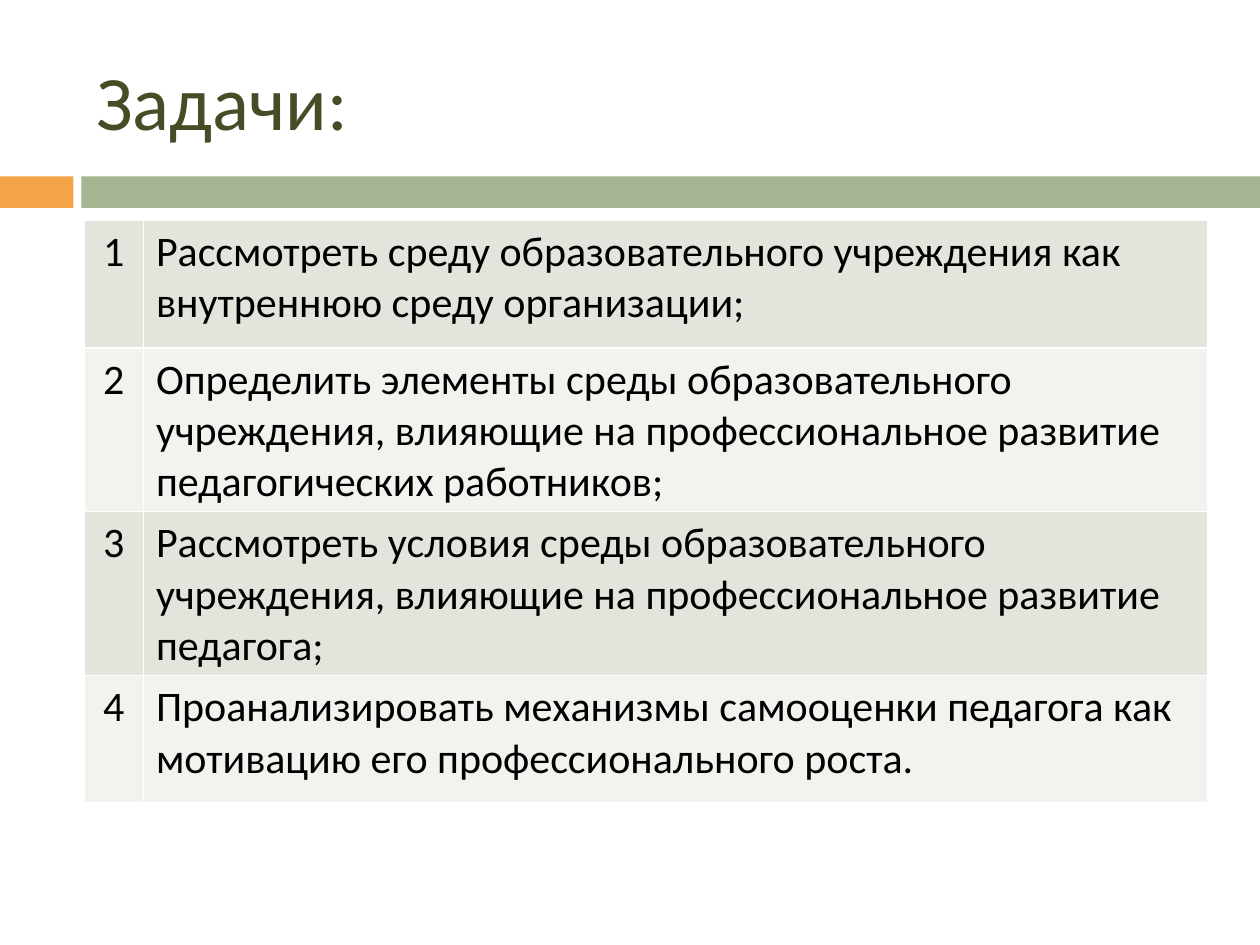
from pptx import Presentation
from pptx.dml.color import RGBColor
from pptx.enum.shapes import MSO_SHAPE
from pptx.enum.text import MSO_ANCHOR, PP_ALIGN
from pptx.util import Pt

RECT = MSO_SHAPE.RECTANGLE
MIDDLE = MSO_ANCHOR.MIDDLE
LEFT, CENTER = PP_ALIGN.LEFT, PP_ALIGN.CENTER

ORANGE = RGBColor(0xF3, 0xA4, 0x47)
GREEN = RGBColor(0xA5, 0xB5, 0x92)
OLIVE = RGBColor(0x44, 0x4D, 0x26)
BLACK = RGBColor(0, 0, 0)
BANDS = (RGBColor(0xE1, 0xE5, 0xDC), RGBColor(0xF0, 0xF3, 0xEE))

TASKS = (
    "Рассмотреть среду образовательного учреждения как внутреннюю среду организации;",
    "Определить элементы среды образовательного учреждения, влияющие на "
    "профессиональное развитие педагогических работников;",
    "Рассмотреть условия среды образовательного учреждения, влияющие на "
    "профессиональное развитие педагога;",
    "Проанализировать механизмы самооценки педагога как мотивацию его "
    "профессионального роста.",
)


class SlideBuilder:
    title_font = {"name": "Calibri", "size": Pt(44)}
    body_font = {"name": "Calibri", "size": Pt(24)}

    def __init__(self, slide):
        self.slide = slide

    def add_text(self, tf, text, font, color, align=LEFT):
        p = tf.paragraphs[0]
        p.alignment = align
        r = p.add_run()
        r.text = text
        for name, value in font.items():
            setattr(r.font, name, value)
        r.font.color.rgb = color

    def bar(self, x, y, w, h, color):
        sp = self.slide.shapes.add_shape(RECT, Pt(x), Pt(y), Pt(w), Pt(h))
        sp.shadow.inherit = False
        sp.fill.solid()
        sp.fill.fore_color.rgb = color
        sp.line.fill.background()

    def title(self, x, y, w, h, text):
        tf = self.slide.shapes.add_textbox(Pt(x), Pt(y), Pt(w), Pt(h)).text_frame
        tf.word_wrap = True
        tf.vertical_anchor = MIDDLE
        self.add_text(tf, text, self.title_font, OLIVE)

    def numbered_table(self, x, y, widths, row_h, items):
        table = self.slide.shapes.add_table(
            len(items), len(widths), Pt(x), Pt(y),
            Pt(sum(widths)), Pt(row_h * len(items))).table
        table.first_row = False
        for col, width in zip(table.columns, widths):
            col.width = Pt(width)
        for i, item in enumerate(items):
            table.rows[i].height = Pt(row_h)
            for j, (text, align) in enumerate(((str(i + 1), CENTER), (item, LEFT))):
                cell = table.cell(i, j)
                cell.fill.solid()
                cell.fill.fore_color.rgb = BANDS[i % 2]
                self.add_text(cell.text_frame, text, self.body_font, BLACK, align)


def main():
    prs = Presentation()
    prs.slide_width, prs.slide_height = Pt(720), Pt(540)
    s = SlideBuilder(prs.slides.add_slide(prs.slide_layouts[6]))

    # Divider under the title
    s.bar(0, 100.8, 42, 18, ORANGE)
    s.bar(46.5, 100.8, 673.5, 18, GREEN)

    # Title
    s.title(48, 18, 642, 78, "Задачи:")

    # Numbered tasks
    s.numbered_table(48, 126, (34, 608), 72.8, TASKS)

    prs.save("out.pptx")


if __name__ == "__main__":
    main()
